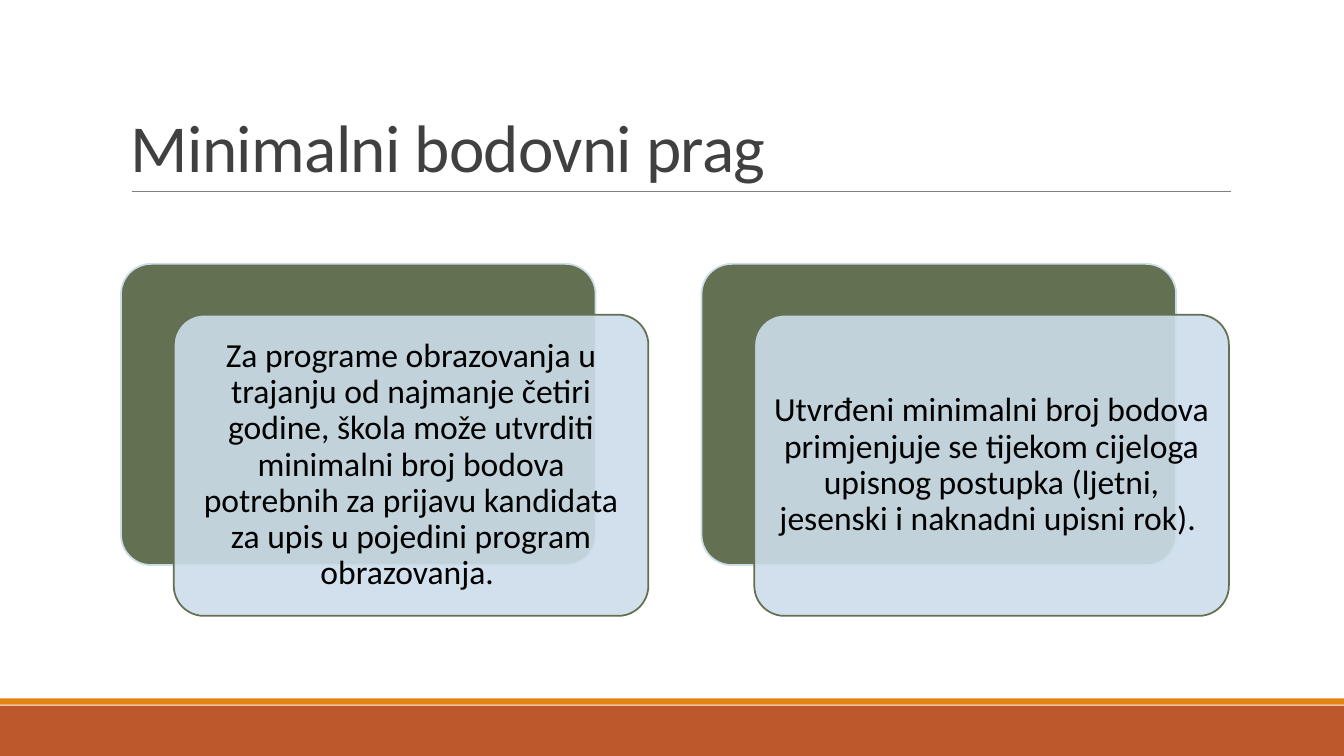
from dataclasses import dataclass

from lxml.etree import SubElement
from pptx import Presentation
from pptx.dml.color import RGBColor
from pptx.enum.shapes import MSO_CONNECTOR as Connector, MSO_SHAPE as Shape
from pptx.enum.text import MSO_ANCHOR as Anchor, PP_ALIGN as Align
from pptx.oxml.ns import qn
from pptx.util import Cm, Pt


@dataclass(frozen=True)
class Theme:
    font: str = "Calibri"
    title_size: float = 48
    body_size: float = 24
    title_color: str = "404040"
    body_color: str = "000000"
    rule: str = "808080"
    footer: str = "BD582C"
    footer_accent: str = "E48312"
    green: str = "637052"
    pale_blue: str = "CCDDEA"


CARD_TEXTS = (
    "Za programe obrazovanja u trajanju od najmanje četiri godine, škola može "
    "utvrditi minimalni broj bodova potrebnih za prijavu kandidata za upis u "
    "pojedini program obrazovanja. ",
    "Utvrđeni minimalni broj bodova primjenjuje se tijekom cijeloga upisnog "
    "postupka (ljetni, jesenski i naknadni upisni rok). ",
)
CARD_LEFT, CARD_TOP, CARD_PITCH = 3.05, 6.65, 14.63
CARD_WIDTH, CARD_HEIGHT = 11.96, 7.59
SHIFT_X, SHIFT_Y = 1.33, 1.28


def write_text(shape, text, *, font, size, color, align, anchor, line_spacing,
               letter_spacing=0):
    """Fill a shape with one paragraph; letter_spacing is in points."""
    frame = shape.text_frame
    frame.word_wrap = True
    frame.vertical_anchor = anchor
    frame.margin_left = frame.margin_right = Cm(0.25)
    paragraph = frame.paragraphs[0]
    paragraph.alignment = align
    paragraph.line_spacing = line_spacing
    run = paragraph.add_run()
    run.text = text
    run.font.name = font
    run.font.size = Pt(size)
    run.font.color.rgb = RGBColor.from_string(color)
    if letter_spacing:
        run.font._element.set("spc", str(int(letter_spacing * 100)))
    return frame


class SlideBuilder:
    """Draws elements on one slide; lengths are in centimetres."""

    def __init__(self, slide, theme):
        self.slide = slide
        self.theme = theme

    def box(self, kind, left, top, width, height, fill, line=None, opacity=100):
        shape = self.slide.shapes.add_shape(
            kind, Cm(left), Cm(top), Cm(width), Cm(height))
        shape.shadow.inherit = False
        shape.fill.solid()
        shape.fill.fore_color.rgb = RGBColor.from_string(fill)
        if opacity < 100:
            color = shape.fill._xPr.find(qn("a:solidFill"))[0]
            SubElement(color, qn("a:alpha"), val=str(opacity * 1000))
        if line:
            shape.line.color.rgb = RGBColor.from_string(line)
            shape.line.width = Pt(1.25)
        else:
            shape.line.fill.background()
        return shape

    def band(self, top, height, fill):
        self.box(Shape.RECTANGLE, 0, top, 33.87, height, fill)

    def rounded_box(self, left, top, **style):
        shape = self.box(Shape.ROUNDED_RECTANGLE, left, top,
                         CARD_WIDTH, CARD_HEIGHT, **style)
        shape.adjustments[0] = 0.1
        return shape

    def card(self, left, top, text):
        """Draw a green panel with a translucent text panel shifted over it."""
        theme = self.theme
        self.rounded_box(left, top, fill=theme.green, line=theme.pale_blue)
        front = self.rounded_box(left + SHIFT_X, top + SHIFT_Y,
                                 fill=theme.pale_blue, line=theme.green, opacity=90)
        frame = write_text(front, text, font=theme.font, size=theme.body_size,
                           color=theme.body_color, align=Align.CENTER,
                           anchor=Anchor.MIDDLE, line_spacing=0.9)
        frame.margin_top = frame.margin_bottom = Cm(0.25)

    def rule(self, left, right, y):
        line = self.slide.shapes.add_connector(
            Connector.STRAIGHT, Cm(left), Cm(y), Cm(right), Cm(y))
        line.line.color.rgb = RGBColor.from_string(self.theme.rule)
        line.line.width = Pt(0.5)
        SubElement(line._element.spPr, qn("a:effectLst"))

    def title(self, text, left, top, width, height):
        theme = self.theme
        box = self.slide.shapes.add_textbox(
            Cm(left), Cm(top), Cm(width), Cm(height))
        write_text(box, text, font=theme.font, size=theme.title_size,
                   color=theme.title_color, align=Align.LEFT,
                   anchor=Anchor.BOTTOM, line_spacing=0.85, letter_spacing=-0.5)


def main():
    presentation = Presentation()
    presentation.slide_width = Cm(33.87)
    presentation.slide_height = Cm(19.05)
    theme = Theme()
    slide = presentation.slides.add_slide(presentation.slide_layouts[6])
    builder = SlideBuilder(slide, theme)

    builder.band(17.78, 1.27, theme.footer)
    builder.band(17.6, 0.16, theme.footer_accent)
    builder.rule(3.32, 31.01, 4.83)
    builder.title("Minimalni bodovni prag", 3.05, 0.79, 27.94, 4.04)
    for index, text in enumerate(CARD_TEXTS):
        builder.card(CARD_LEFT + index * CARD_PITCH, CARD_TOP, text)

    presentation.save("out.pptx")


if __name__ == "__main__":
    main()
